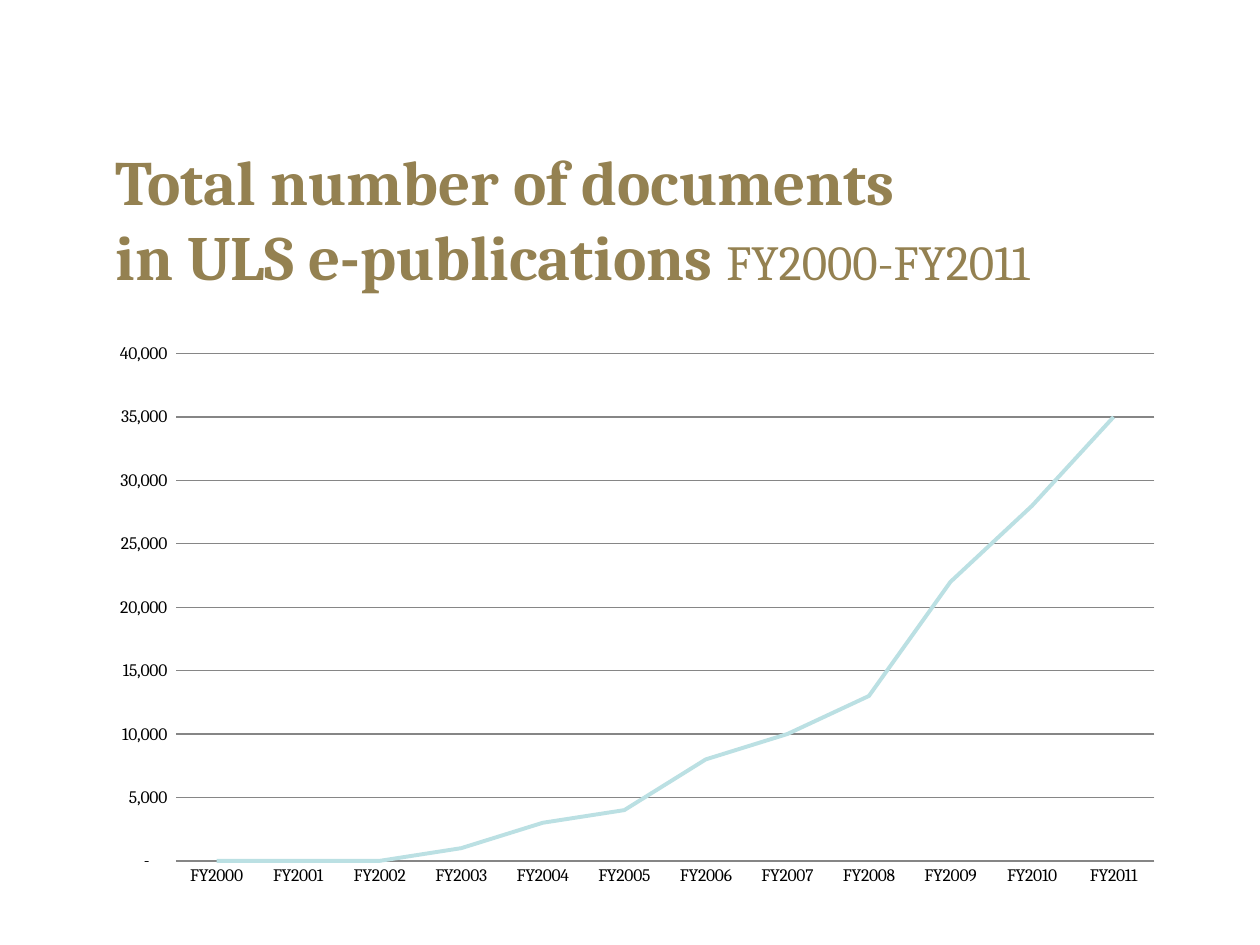
from pptx import Presentation
from pptx.chart.data import CategoryChartData
from pptx.dml.color import RGBColor
from pptx.enum.chart import XL_CHART_TYPE, XL_TICK_MARK
from pptx.enum.text import MSO_ANCHOR, MSO_AUTO_SIZE, PP_ALIGN
from pptx.util import Pt

GOLD = RGBColor(0x94, 0x81, 0x51)
PALE_TEAL = RGBColor(0xBB, 0xE0, 0xE3)
GRAY = RGBColor(0x86, 0x86, 0x86)
BLACK = RGBColor(0, 0, 0)
FONT = "Cambria"
NUMBER_FORMAT = '_(* #,##0_);_(* \\(#,##0\\);_(* "-"??_);_('
DOCUMENT_TOTALS = [0, 0, 0, 1000, 3000, 4000, 8000, 10000, 13000, 22000, 28000, 35000]


def set_attributes(target, values):
    """Set each named attribute on the target."""
    for name, value in values.items():
        setattr(target, name, value)


def place(shape, box):
    """Move a shape to a box of left, top, width and height in points."""
    names = ("left", "top", "width", "height")
    set_attributes(shape, dict(zip(names, map(Pt, box))))


def add_title(slide, box):
    """Fill and format the title placeholder."""
    title = slide.shapes.title
    place(title, box)
    frame = title.text_frame
    set_attributes(frame, {
        "word_wrap": True,
        "auto_size": MSO_AUTO_SIZE.NONE,
        "vertical_anchor": MSO_ANCHOR.MIDDLE,
        "margin_top": 0,
        "margin_bottom": Pt(41),
    })
    paragraph = frame.paragraphs[0]
    paragraph.alignment = PP_ALIGN.LEFT
    pieces = [
        ("Total number of documents", 36, True),
        ("in ULS e-publications ", 36, True),
        ("FY2000-FY2011", 28, False),
    ]
    for index, (text, size, bold) in enumerate(pieces):
        if index == 1:
            paragraph.add_line_break()
        run = paragraph.add_run()
        run.text = text
        set_attributes(run.font, {"name": FONT, "size": Pt(size), "bold": bold})
        run.font.color.rgb = GOLD


def add_document_chart(slide, box):
    """Add the line chart of documents per fiscal year."""
    data = CategoryChartData(number_format=NUMBER_FORMAT)
    data.categories = [f"FY{2000 + index}" for index in range(len(DOCUMENT_TOTALS))]
    data.add_series("Series 1", DOCUMENT_TOTALS)
    chart = slide.shapes.add_chart(XL_CHART_TYPE.LINE, *map(Pt, box), data).chart
    set_attributes(chart, {"has_legend": False, "has_title": False})
    set_attributes(chart.font, {"name": FONT, "size": Pt(10)})
    chart.font.color.rgb = BLACK

    plot = chart.plots[0]
    plot.vary_by_categories = False
    series = plot.series[0]
    series.smooth = False
    series.format.line.width = Pt(2.25)
    series.format.line.color.rgb = PALE_TEAL

    category_axis, value_axis = chart.category_axis, chart.value_axis
    for axis in (category_axis, value_axis):
        set_attributes(axis, {
            "major_tick_mark": XL_TICK_MARK.NONE,
            "minor_tick_mark": XL_TICK_MARK.NONE,
        })
    set_attributes(value_axis, {
        "minimum_scale": 0,
        "maximum_scale": 40000,
        "major_unit": 5000,
        "has_major_gridlines": True,
    })
    set_attributes(value_axis.tick_labels, {
        "number_format": NUMBER_FORMAT,
        "number_format_is_linked": False,
    })
    value_axis.format.line.fill.background()
    for line in (category_axis.format.line, value_axis.major_gridlines.format.line):
        line.width = Pt(0.75)
        line.color.rgb = GRAY


def main():
    """Build and save the slide."""
    presentation = Presentation()
    set_attributes(presentation, {"slide_width": Pt(720), "slide_height": Pt(540)})
    slide = presentation.slides.add_slide(presentation.slide_layouts[5])
    add_document_chart(slide, (54, 190, 618, 322.5))
    add_title(slide, (59, 89, 636, 112))
    presentation.save("out.pptx")


if __name__ == "__main__":
    main()
